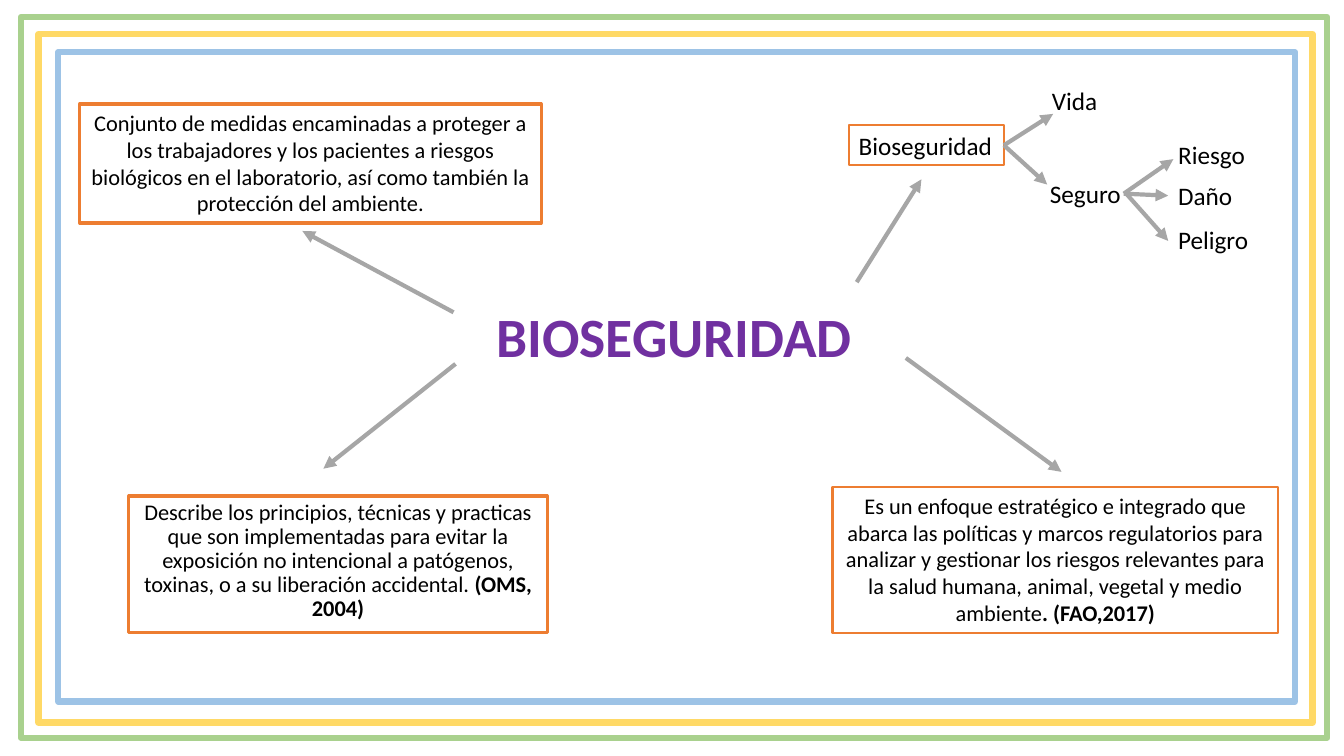
"""Build the BIOSEGURIDAD concept map slide."""
from dataclasses import dataclass
from typing import Optional

import pptx
import pptx.dml.color
import pptx.enum.shapes
import pptx.enum.text
import pptx.oxml
import pptx.oxml.ns
import pptx.util
from pptx.util import Cm

BLACK, WHITE, GRAY = "000000", "FFFFFF", "A6A6A6"
ORANGE, PURPLE = "ED7D31", "7030A0"
FONT = "Calibri"


@dataclass(frozen=True)
class Frame:
    x: float
    y: float
    w: float
    h: float
    color: str


@dataclass(frozen=True)
class Label:
    x: float
    y: float
    w: float
    h: float
    text: str
    source: str = ""
    size: float = 18
    color: str = BLACK
    bold: bool = False
    centered: bool = False
    wrap: bool = True
    grow: bool = True
    spacing: float = 1.0
    border: float = 0


@dataclass(frozen=True)
class Arrow:
    x1: float
    y1: float
    x2: float
    y2: float
    origin: Optional[str] = None


FRAMES = [
    Frame(0.53, 0.43, 32.92, 18.16, "A9D18E"),
    Frame(0.97, 0.86, 32.11, 17.35, "FFD966"),
    Frame(1.47, 1.32, 31.17, 16.36, "9DC3E6"),
]

LABELS = [
    Label(11.15, 7.52, 11.68, 2.06, "BIOSEGURIDAD", size=39.6, color=PURPLE,
          bold=True, centered=True, grow=False, spacing=0.9),
    Label(3.25, 12.5, 10.54, 3.45,
          "Describe los principios, técnicas y practicas que son implementadas para "
          "evitar la exposición no intencional a patógenos, toxinas, o a su "
          "liberación accidental. ", "(OMS, 2004)",
          size=16, centered=True, grow=False, spacing=0.9, border=2.25),
    Label(21.39, 3.15, 3.91, 1.02, "Bioseguridad", border=1.5),
    Label(2.01, 2.62, 11.63, 3, 
          "Conjunto de medidas encaminadas a proteger a los trabajadores y los "
          "pacientes a riesgos biológicos en el laboratorio, así como también la "
          "protección del ambiente.", size=16, centered=True, border=2.25),
    Label(20.98, 12.27, 11.23, 3.68,
          "Es un enfoque estratégico e integrado que abarca las políticas y marcos "
          "regulatorios para analizar y gestionar los riesgos relevantes para la "
          "salud humana, animal, vegetal y medio ambiente", ". (FAO,2017)",
          size=16, centered=True, border=1.5),
    Label(26.26, 2.03, 1.68, 1.02, "Vida", wrap=False),
    Label(29.44, 3.38, 2.21, 1.02, "Riesgo", wrap=False),
    Label(29.44, 5.54, 2.31, 1.02, "Peligro", wrap=False),
    Label(29.44, 4.42, 1.91, 1.02, "Daño", wrap=False),
    Label(26.21, 4.37, 2.46, 1.02, "Seguro", wrap=False),
]

ARROWS = [
    Arrow(21.59, 7.11, 23.22, 4.52),
    Arrow(25.3, 3.66, 26.54, 2.87, "Bioseguridad"),
    Arrow(25.3, 3.66, 26.39, 4.65, "Bioseguridad"),
    Arrow(28.32, 4.88, 29.57, 4.01),
    Arrow(28.32, 4.88, 29.44, 4.93),
    Arrow(28.4, 4.9, 29.44, 6.07),
    Arrow(11.43, 7.87, 7.62, 5.82),
    Arrow(22.83, 9.02, 26.75, 11.89),
    Arrow(11.48, 9.17, 8.15, 11.81),
]


def rgb(color: str) -> pptx.dml.color.RGBColor:
    """Turn a hex string into a colour."""
    return pptx.dml.color.RGBColor.from_string(color)


def set_line(line, color: str, width: float) -> None:
    """Give a line its colour and its width in points."""
    line.color.rgb = rgb(color)
    line.width = pptx.util.Pt(width)


def add_rectangle(s, box: Frame | Label):
    """Add a plain rectangle without shadow."""
    sp = s.shapes.add_shape(pptx.enum.shapes.MSO_SHAPE.RECTANGLE,
                            Cm(box.x), Cm(box.y), Cm(box.w), Cm(box.h))
    sp.shadow.inherit = False
    return sp


def add_frame(s, frame: Frame) -> None:
    """Draw one coloured border of the slide."""
    sp = add_rectangle(s, frame)
    sp.fill.background()
    set_line(sp.line, frame.color, 4.5)


def add_run(p, text: str, label: Label, bold: bool) -> None:
    """Append one formatted run."""
    r = p.add_run()
    r.text = text
    r.font.name = FONT
    r.font.size = pptx.util.Pt(label.size)
    r.font.bold = bold
    r.font.color.rgb = rgb(label.color)


def add_label(s, label: Label):
    """Draw a text, boxed when it has a border."""
    if label.border:
        sp = add_rectangle(s, label)
        sp.fill.solid()
        sp.fill.fore_color.rgb = rgb(WHITE)
        set_line(sp.line, ORANGE, label.border)
    else:
        sp = s.shapes.add_textbox(Cm(label.x), Cm(label.y), Cm(label.w), Cm(label.h))
    tf = sp.text_frame
    tf.word_wrap = label.wrap
    sizes, anchors = pptx.enum.text.MSO_AUTO_SIZE, pptx.enum.text.MSO_ANCHOR
    tf.auto_size = sizes.SHAPE_TO_FIT_TEXT if label.grow else sizes.NONE
    tf.vertical_anchor = anchors.MIDDLE if label.bold else anchors.TOP
    p = tf.paragraphs[0]
    aligns = pptx.enum.text.PP_ALIGN
    p.alignment = aligns.CENTER if label.centered else aligns.LEFT
    p.line_spacing = label.spacing
    add_run(p, label.text, label, label.bold)
    if label.source:
        add_run(p, label.source, label, True)
    return sp


def add_arrow(s, arrow: Arrow, boxes: dict) -> None:
    """Draw a gray arrow, joined to its origin box if it has one."""
    cx = s.shapes.add_connector(pptx.enum.shapes.MSO_CONNECTOR.STRAIGHT,
                                Cm(arrow.x1), Cm(arrow.y1), Cm(arrow.x2), Cm(arrow.y2))
    if arrow.origin:
        cx.begin_connect(boxes[arrow.origin], 3)
    set_line(cx.line, GRAY, 3)
    ns = pptx.oxml.ns.nsdecls("a")
    cx.line._get_or_add_ln().append(
        pptx.oxml.parse_xml(f'<a:tailEnd {ns} type="triangle"/>'))
    cx._element.spPr.append(pptx.oxml.parse_xml(f"<a:effectLst {ns}/>"))


def main() -> None:
    """Assemble and save the slide."""
    prs = pptx.Presentation()
    prs.slide_width, prs.slide_height = Cm(33.87), Cm(19.05)
    s = prs.slides.add_slide(prs.slide_layouts[6])
    for frame in FRAMES:
        add_frame(s, frame)
    boxes = {label.text: add_label(s, label) for label in LABELS}
    for arrow in ARROWS:
        add_arrow(s, arrow, boxes)
    prs.save("out.pptx")


if __name__ == "__main__":
    main()
